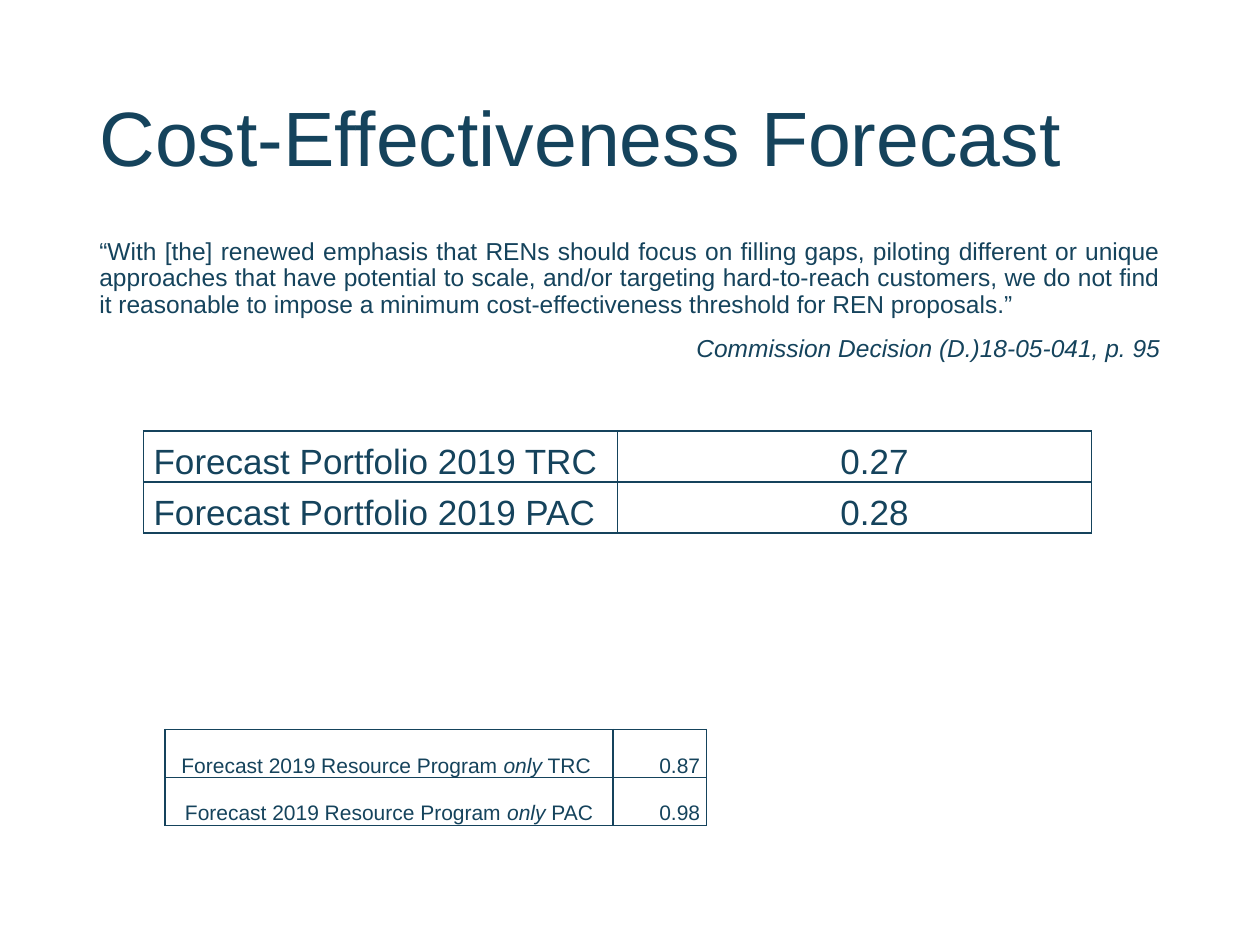
from dataclasses import dataclass

from lxml.etree import SubElement
from pptx import Presentation
from pptx.dml.color import RGBColor
from pptx.enum.text import MSO_ANCHOR as Anchor, MSO_AUTO_SIZE as AutoSize, PP_ALIGN as Align
from pptx.oxml.ns import qn
from pptx.util import Pt

COLORS = {"ink": "15435C"}
FONT = "Arial"
LEFT, WIDTH = 49.7, 620.6
CELL_INSET = 0.7

# A piece of text and whether it is italic
Run = tuple[str, bool]


@dataclass
class ForecastRow:
    label: list[Run]
    value: str


@dataclass
class ForecastTable:
    left: float
    top: float
    col_widths: tuple[float, float]
    row_height: float
    size: float
    label_align: Align
    label_inset: float
    value_align: Align
    value_insets: tuple[float, float]  # left, right
    rows: list[ForecastRow]


TABLES = [
    ForecastTable(
        82, 246.2, (270.8, 270.8), 29.2, 20, Align.LEFT, 5.8, Align.LEFT, (127.5, CELL_INSET),
        [ForecastRow([("Forecast Portfolio 2019 TRC", False)], "0.27"),
         ForecastRow([("Forecast Portfolio 2019 PAC", False)], "0.28")]),
    ForecastTable(
        94.3, 416.9, (256, 53.4), 27.4, 12, Align.CENTER, CELL_INSET, Align.RIGHT, (CELL_INSET, 3.6),
        [ForecastRow([("Forecast 2019 Resource Program ", False), ("only", True),
                      (" TRC ", False)], "0.87"),
         ForecastRow([("Forecast 2019 Resource Program ", False), ("only ", True),
                      ("PAC", False)], "0.98")]),
]


def set_text(p, runs: list[Run], size: float, align: Align) -> None:
    p.alignment = align
    p.font.name, p.font.size = FONT, Pt(size)
    p.font.color.rgb = RGBColor.from_string(COLORS["ink"])
    for text, italic in runs:
        r = p.add_run()
        r.text = text
        if italic:
            r.font.italic = True


def set_borders(cell, width: float = 1) -> None:
    """Line all four sides; the lines must come before the fill in tcPr."""
    tc_pr = cell._tc.get_or_add_tcPr()
    for side in ("lnL", "lnR", "lnT", "lnB"):
        line = SubElement(tc_pr, qn(f"a:{side}"), w=str(Pt(width)))
        fill = SubElement(line, qn("a:solidFill"))
        SubElement(fill, qn("a:srgbClr"), val=COLORS["ink"])


def fill_cell(cell, runs: list[Run], size: float, align: Align,
              left: float, right: float) -> None:
    set_borders(cell)
    cell.fill.background()
    cell.vertical_anchor = Anchor.BOTTOM
    cell.margin_left, cell.margin_right = Pt(left), Pt(right)
    cell.margin_top, cell.margin_bottom = Pt(CELL_INSET), Pt(0)
    set_text(cell.text_frame.paragraphs[0], runs, size, align)


def add_forecast(s, spec: ForecastTable) -> None:
    table = s.shapes.add_table(
        len(spec.rows), 2, Pt(spec.left), Pt(spec.top),
        Pt(sum(spec.col_widths)), Pt(spec.row_height * len(spec.rows))).table
    table.first_row = table.horz_banding = False
    for column, width in zip(table.columns, spec.col_widths):
        column.width = Pt(width)
    for i, row in enumerate(spec.rows):
        table.rows[i].height = Pt(spec.row_height)
        fill_cell(table.cell(i, 0), row.label, spec.size, spec.label_align,
                  spec.label_inset, CELL_INSET)
        fill_cell(table.cell(i, 1), [(row.value, False)], spec.size,
                  spec.value_align, *spec.value_insets)


def add_title(s, text: str) -> None:
    title = s.shapes.title
    title.left, title.top, title.width, title.height = Pt(LEFT), Pt(28.8), Pt(WIDTH), Pt(104.4)
    tf = title.text_frame
    tf.auto_size, tf.vertical_anchor = AutoSize.NONE, Anchor.MIDDLE
    p = tf.paragraphs[0]
    p.line_spacing = 0.9
    set_text(p, [(text, False)], 44, Align.LEFT)


def add_quote(s, quote: str, citation: str) -> None:
    tf = s.shapes.add_textbox(Pt(LEFT), Pt(133.2), Pt(WIDTH), Pt(90)).text_frame
    tf.word_wrap = True
    p = tf.paragraphs[0]
    p.line_spacing = 0.9
    set_text(p, [(quote, False)], 14, Align.JUSTIFY)
    p = tf.add_paragraph()
    p.line_spacing, p.space_before = 0.9, Pt(10)
    set_text(p, [(citation, True)], 14, Align.RIGHT)


def main() -> None:
    prs = Presentation()
    prs.slide_width, prs.slide_height = Pt(720), Pt(540)
    s = prs.slides.add_slide(prs.slide_layouts.get_by_name("Title Only"))
    add_title(s, "Cost-Effectiveness Forecast")
    add_quote(
        s,
        "“With [the] renewed emphasis that RENs should focus on filling gaps, piloting "
        "different or unique approaches that have potential to scale, and/or targeting "
        "hard-to-reach customers, we do not find it reasonable to impose a minimum "
        "cost-effectiveness threshold for REN proposals.”",
        "Commission Decision (D.)18-05-041, p. 95")
    for spec in TABLES:
        add_forecast(s, spec)
    prs.save("out.pptx")


if __name__ == "__main__":
    main()
